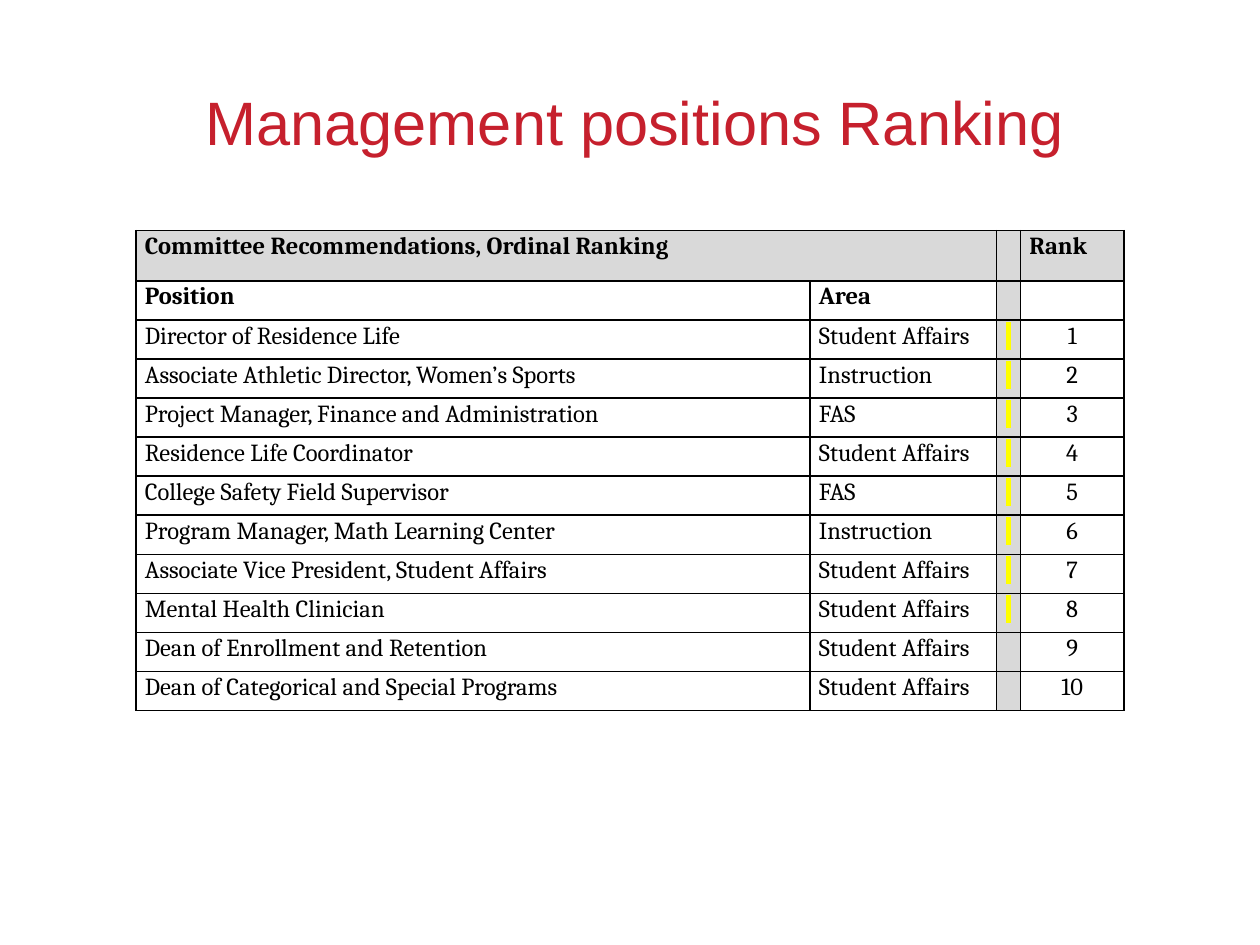
from typing import NamedTuple

from lxml import etree
from pptx import Presentation
from pptx.dml.color import RGBColor
from pptx.enum import text as tx
from pptx.oxml import ns
from pptx.util import Inches, Pt

RED = RGBColor(0xC6, 0x20, 0x2D)
BLACK = RGBColor(0, 0, 0)
GREY = RGBColor(0xD9, 0xD9, 0xD9)
YELLOW = RGBColor(0xFF, 0xFF, 0)

COLUMN_WIDTHS = (5.35, 1.48, 0.19, 0.82)
HEADER_HEIGHT, ROW_HEIGHT = 0.4, 0.31
MARKED_RANKS = 8  # the top ranks carry a highlighted mark
GAP, RANK = 2, 3  # column numbers


class Position(NamedTuple):
    title: str
    area: str


POSITIONS = (
    Position("Director of Residence Life", "Student Affairs"),
    Position("Associate Athletic Director, Women’s Sports", "Instruction"),
    Position("Project Manager, Finance and Administration", "FAS"),
    Position("Residence Life Coordinator", "Student Affairs"),
    Position("College Safety Field Supervisor", "FAS"),
    Position("Program Manager, Math Learning Center", "Instruction"),
    Position("Associate Vice President, Student Affairs", "Student Affairs"),
    Position("Mental Health Clinician", "Student Affairs"),
    Position("Dean of Enrollment and Retention", "Student Affairs"),
    Position("Dean of Categorical and Special Programs", "Student Affairs"),
)


def add_child(parent, tag: str, **attributes: str):
    return etree.SubElement(parent, ns.qn(tag), **attributes)


def write(frame, content: str, *, size=14, font="Cambria", color=BLACK,
          bold=False, centered=False, spacing=1.07, highlight=None) -> None:
    """Put one formatted paragraph into a text frame."""
    paragraph = frame.paragraphs[0]
    paragraph.line_spacing = spacing
    paragraph.alignment = tx.PP_ALIGN.CENTER if centered else tx.PP_ALIGN.LEFT
    if not content:
        add_child(paragraph._p, "a:endParaRPr", sz=str(size * 100))
        return
    run = paragraph.add_run()
    run.text = content
    run.font.size, run.font.name, run.font.bold = Pt(size), font, bold
    run.font.color.rgb = color
    if highlight is not None:
        mark = etree.Element(ns.qn("a:highlight"))
        add_child(mark, "a:srgbClr", val=str(highlight))
        run.font._element.find(ns.qn("a:solidFill")).addnext(mark)


def style_cell(cell, shaded: bool) -> None:
    """Set margins, black borders and fill of a cell."""
    cell.margin_left = cell.margin_right = Inches(0.07)
    cell.margin_top = cell.margin_bottom = 0
    for side in ("a:lnL", "a:lnR", "a:lnT", "a:lnB"):
        line = add_child(cell._tc.get_or_add_tcPr(), side, w=str(Pt(1)))
        add_child(add_child(line, "a:solidFill"), "a:srgbClr", val=str(BLACK))
    if shaded:
        cell.fill.solid()
        cell.fill.fore_color.rgb = GREY
    else:
        cell.fill.background()


def add_ranking(slide) -> None:
    rows = [("Committee Recommendations, Ordinal Ranking", "", "", "Rank"),
            ("Position", "Area", "", "")]
    for rank, position in enumerate(POSITIONS, 1):
        mark = " " if rank <= MARKED_RANKS else ""
        rows.append((position.title, position.area, mark, str(rank)))

    height = HEADER_HEIGHT + ROW_HEIGHT * (len(rows) - 1)
    table = slide.shapes.add_table(
        len(rows), len(COLUMN_WIDTHS), Inches(1.08), Inches(1.83),
        Inches(sum(COLUMN_WIDTHS)), Inches(height)).table
    table.first_row = table.horz_banding = False
    for column, width in zip(table.columns, COLUMN_WIDTHS):
        column.width = Inches(width)
    for r, values in enumerate(rows):
        table.rows[r].height = Inches(ROW_HEIGHT if r else HEADER_HEIGHT)
        for c, value in enumerate(values):
            cell = table.cell(r, c)
            style_cell(cell, shaded=r == 0 or c == GAP)
            write(cell.text_frame, value, bold=r < 2,
                  centered=c == GAP or (c == RANK and r > 1),
                  highlight=YELLOW if c == GAP else None)
    table.cell(0, 0).merge(table.cell(0, 1))


def main() -> None:
    deck = Presentation()
    deck.slide_width, deck.slide_height = Inches(10), Inches(7.5)
    slide = deck.slides.add_slide(deck.slide_layouts[6])

    # Title
    title = slide.shapes.add_textbox(
        Inches(0.25), Inches(0.42), Inches(9.58), Inches(1.08)).text_frame
    title.word_wrap = True
    title.vertical_anchor = tx.MSO_ANCHOR.MIDDLE
    write(title, "Management positions Ranking", size=35, font="Arial",
          color=RED, centered=True, spacing=1.0)

    # Ranking table
    add_ranking(slide)
    deck.save("out.pptx")


if __name__ == "__main__":
    main()
